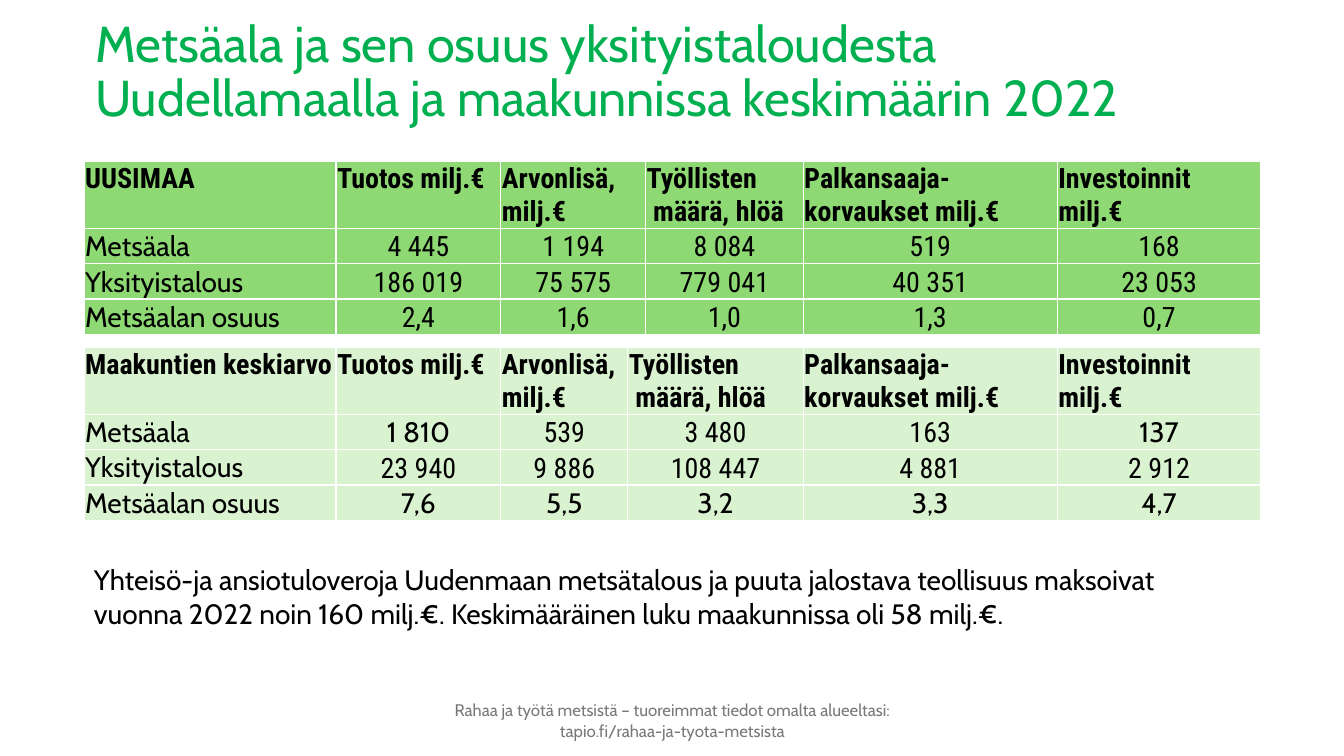
from dataclasses import dataclass
from typing import Any

from lxml import etree
from pptx import Presentation
from pptx import util as u
from pptx.dml.color import RGBColor
from pptx.enum import text
from pptx.oxml import ns

PX = 9525
CABIN = "Cabin"
ROBOTO = "Roboto Condensed"
COLOURS = {
    "title": "00B050",
    "body": "000000",
    "footer": "797979",
    "region": "8ED973",
    "average": "D9F2D0",
    "border": "FFFFFF",
}
LEFT = text.PP_ALIGN.LEFT
CENTER = text.PP_ALIGN.CENTER
TOP = text.MSO_ANCHOR.TOP
MIDDLE = text.MSO_ANCHOR.MIDDLE
BOTTOM = text.MSO_ANCHOR.BOTTOM
HEADER_HEIGHT, ROW_HEIGHT = 62, 33
HEADINGS = [
    "Tuotos milj.€",
    "Arvonlisä, milj.€",
    "Työllisten\n määrä, hlöä",
    "Palkansaaja-korvaukset milj.€",
    "Investoinnit\nmilj.€",
]
ROW_NAMES = ["Metsäala", "Yksityistalous", "Metsäalan osuus"]


@dataclass(frozen=True)
class Style:
    size: int
    colour: str
    font: str = CABIN
    bold: bool = False
    align: Any = LEFT
    line_spacing: float = 1.0


@dataclass(frozen=True)
class TextBlock:
    place: tuple[int, int, int, int]
    words: str
    style: Style
    anchor: Any = MIDDLE


@dataclass(frozen=True)
class FigureTable:
    name: str
    left: int
    top: int
    widths: list[int]
    colour: str
    figures: list[list[str]]
    cabin_cells: frozenset[tuple[int, int]] = frozenset()


TITLE = TextBlock(
    (81, 0, 1170, 139),
    "Metsäala ja sen osuus yksityistaloudesta\n"
    "Uudellamaalla ja maakunnissa keskimäärin 2022",
    Style(36, "title", line_spacing=0.9),
)
TEXT_BLOCKS = [
    TextBlock(
        (415, 667, 451, 38),
        "Rahaa ja työtä metsistä – tuoreimmat tiedot omalta alueeltasi: "
        "tapio.fi/rahaa-ja-tyota-metsista",
        Style(12, "footer", align=CENTER),
    ),
    TextBlock(
        (80, 531, 1046, 74),
        "Yhteisö-ja ansiotuloveroja Uudenmaan metsätalous ja puuta jalostava "
        "teollisuus maksoivat vuonna 2022 noin 160 milj.€. Keskimääräinen luku "
        "maakunnissa oli 58 milj.€.",
        Style(20, "body"),
        TOP,
    ),
]
TABLES = [
    FigureTable(
        "UUSIMAA", 80, 154, [240, 157, 138, 150, 242, 194], "region",
        [
            ["4 445", "1 194", "8 084", "519", "168"],
            ["186 019", "75 575", "779 041", "40 351", "23 053"],
            ["2,4", "1,6", "1,0", "1,3", "0,7"],
        ],
    ),
    FigureTable(
        "Maakuntien keskiarvo", 80, 331, [240, 157, 121, 167, 242, 194], "average",
        [
            ["1 810", "539", "3 480", "163", "137"],
            ["23 940", "9 886", "108 447", "4 881", "2 912"],
            ["7,6", "5,5", "3,2", "3,3", "4,7"],
        ],
        frozenset({(1, 1), (1, 5)} | {(3, column) for column in range(1, 6)}),
    ),
]


def set_all(target: Any, values: dict[str, Any]) -> None:
    for name, value in values.items():
        setattr(target, name, value)


def write(frame: Any, words: str, style: Style) -> None:
    for index, line in enumerate(words.split("\n")):
        para = frame.paragraphs[0] if index == 0 else frame.add_paragraph()
        set_all(para, {"alignment": style.align, "line_spacing": style.line_spacing})
        span = para.add_run()
        span.text = line
        set_all(span.font, {
            "name": style.font, "size": u.Pt(style.size), "bold": style.bold,
        })
        span.font.color.rgb = RGBColor.from_string(COLOURS[style.colour])


def fill_box(box: Any, block: TextBlock) -> None:
    sides = ("left", "top", "width", "height")
    set_all(box, {side: length * PX for side, length in zip(sides, block.place)})
    set_all(box.text_frame, {
        "word_wrap": True,
        "auto_size": text.MSO_AUTO_SIZE.NONE,
        "vertical_anchor": block.anchor,
    })
    write(box.text_frame, block.words, block.style)


def add_borders(cell: Any) -> None:
    properties = cell._tc.get_or_add_tcPr()
    for side in ("lnL", "lnR", "lnT", "lnB"):
        line = etree.SubElement(properties, ns.qn(f"a:{side}"), w=str(u.Pt(1)))
        solid = etree.SubElement(line, ns.qn("a:solidFill"))
        etree.SubElement(solid, ns.qn("a:srgbClr"), val=COLOURS["border"])


def cell_style(data: FigureTable, row: int, column: int) -> Style:
    if row == 0:
        return Style(20, "body", ROBOTO, bold=True)
    if column == 0:
        return Style(20, "body")
    font = CABIN if (row, column) in data.cabin_cells else ROBOTO
    return Style(20, "body", font, align=CENTER)


def draw_table(page: Any, data: FigureTable) -> None:
    rows = [[data.name, *HEADINGS]]
    rows += [[name, *figures] for name, figures in zip(ROW_NAMES, data.figures)]
    heights = [HEADER_HEIGHT] + [ROW_HEIGHT] * len(ROW_NAMES)
    table = page.shapes.add_table(
        len(rows), len(data.widths), data.left * PX, data.top * PX,
        sum(data.widths) * PX, sum(heights) * PX,
    ).table
    set_all(table, {"first_row": False, "horz_banding": False})
    for column, width in zip(table.columns, data.widths):
        column.width = width * PX
    for row, height in zip(table.rows, heights):
        row.height = height * PX
    for r, row_words in enumerate(rows):
        for c, words in enumerate(row_words):
            cell = table.cell(r, c)
            set_all(cell, {
                "margin_left": PX, "margin_right": PX,
                "margin_top": PX, "margin_bottom": 0,
                "vertical_anchor": BOTTOM if r else TOP,
            })
            add_borders(cell)
            cell.fill.solid()
            cell.fill.fore_color.rgb = RGBColor.from_string(COLOURS[data.colour])
            write(cell.text_frame, words, cell_style(data, r, c))


def main() -> None:
    deck = Presentation()
    set_all(deck, {"slide_width": 1280 * PX, "slide_height": 720 * PX})
    page = deck.slides.add_slide(deck.slide_layouts[5])
    fill_box(page.shapes.title, TITLE)
    for data in TABLES:
        draw_table(page, data)
    for block in TEXT_BLOCKS:
        fill_box(page.shapes.add_textbox(0, 0, PX, PX), block)
    deck.save("out.pptx")


if __name__ == "__main__":
    main()
